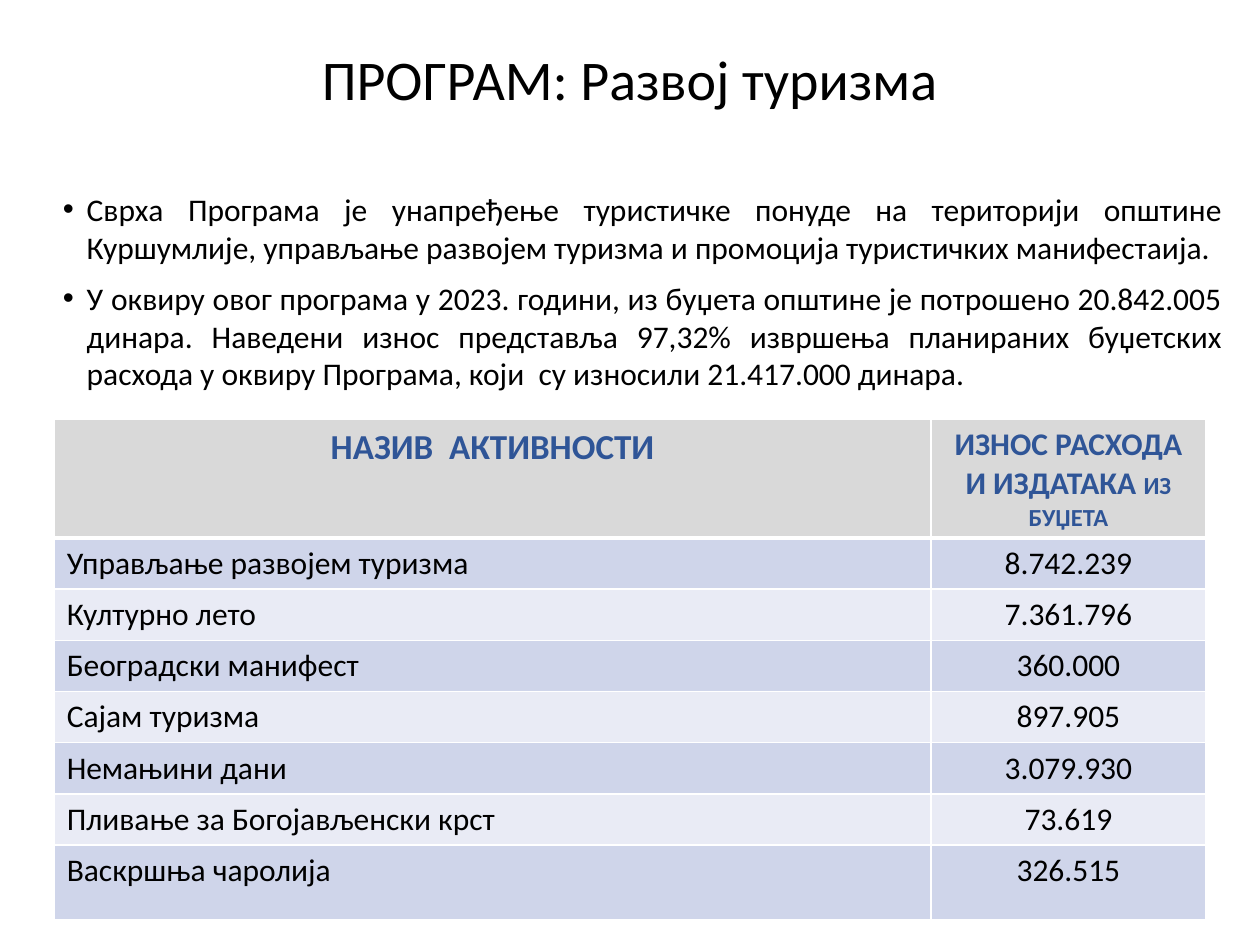
from lxml.etree import SubElement
from pptx import Presentation
from pptx.dml.color import RGBColor
from pptx.enum.text import MSO_ANCHOR, PP_ALIGN
from pptx.oxml.ns import qn
from pptx.util import Inches, Pt

BLACK = RGBColor(0x00, 0x00, 0x00)
WHITE = RGBColor(0xFF, 0xFF, 0xFF)
BLUE = RGBColor(0x2F, 0x55, 0x97)
GRAY = RGBColor(0xD9, 0xD9, 0xD9)
BANDS = (RGBColor(0xCF, 0xD5, 0xEA), RGBColor(0xE9, 0xEB, 0xF5))

TITLE = "ПРОГРАМ: Развој туризма"
BULLETS = [
    "Сврха Програма је унапређење туристичке понуде на територији општине "
    "Куршумлије, управљање развојем туризма и промоција туристичких манифестаија.",
    "У оквиру овог програма у 2023. години, из буџета општине је потрошено "
    "20.842.005 динара. Наведени износ представља 97,32% извршења планираних "
    "буџетских расхода у оквиру Програма, који  су износили 21.417.000 динара.",
]
ACTIVITIES = [
    ("Управљање развојем туризма", "8.742.239"),
    ("Културно лето", "7.361.796"),
    ("Београдски манифест", "360.000"),
    ("Сајам туризма", "897.905"),
    ("Немањини дани", "3.079.930"),
    ("Пливање за Богојављенски крст", "73.619"),
    ("Васкршња чаролија", "326.515"),
]


def add_text(p, text, size=18, color=BLACK, bold=False, align=PP_ALIGN.LEFT):
    p.alignment = align
    r = p.add_run()
    r.text = text
    r.font.name = "Calibri"
    r.font.size = Pt(size)
    r.font.bold = bold
    r.font.color.rgb = color


def add_frame(s, box, anchor=MSO_ANCHOR.TOP):
    tf = s.shapes.add_textbox(*map(Inches, box)).text_frame
    tf.word_wrap = True
    tf.vertical_anchor = anchor
    return tf


def add_title(s, box):
    p = add_frame(s, box, MSO_ANCHOR.BOTTOM).paragraphs[0]
    p.line_spacing = 0.9
    add_text(p, TITLE, size=32, align=PP_ALIGN.CENTER)


def add_bullets(s, box):
    tf = add_frame(s, box)
    for i, text in enumerate(BULLETS):
        p = tf.add_paragraph() if i else tf.paragraphs[0]
        p.space_after = Pt(7.5)
        add_text(p, text, align=PP_ALIGN.JUSTIFY)
        pPr = p._p.get_or_add_pPr()
        pPr.set("marL", str(Inches(0.19)))
        pPr.set("indent", str(Inches(-0.19)))
        SubElement(pPr, qn("a:buFont"), typeface="Arial")
        SubElement(pPr, qn("a:buChar"), char="•")


def style_cell(cell, fill, top=1, bottom=1):
    """Give the cell white borders, in points, and a solid fill."""
    tcPr = cell._tc.get_or_add_tcPr()
    for side, width in (("L", 1), ("R", 1), ("T", top), ("B", bottom)):
        ln = SubElement(tcPr, qn(f"a:ln{side}"), w=str(Pt(width)))
        SubElement(SubElement(ln, qn("a:solidFill")), qn("a:srgbClr"), val=str(WHITE))
    cell.fill.solid()
    cell.fill.fore_color.rgb = fill


def add_activities(s, box):
    left, top, width, height = map(Inches, box)
    table = s.shapes.add_table(len(ACTIVITIES) + 1, 2, left, top, width, height).table
    table.columns[0].width = Inches(6.96)
    table.columns[1].width = width - Inches(6.96)
    header, last, middle = Inches(0.94), Inches(0.59), len(ACTIVITIES) - 1
    for row in table.rows:
        row.height = (height - header - last) // middle
    table.rows[0].height = header
    table.rows[middle + 1].height = last

    headings = ([("НАЗИВ  АКТИВНОСТИ", 20)],
                [("ИЗНОС РАСХОДА И ИЗДАТАКА ", 18), ("ИЗ БУЏЕТА", 14)])
    for col, runs in enumerate(headings):
        cell = table.cell(0, col)
        style_cell(cell, GRAY, bottom=3)
        for text, size in runs:
            add_text(cell.text_frame.paragraphs[0], text, size=size, color=BLUE,
                     bold=True, align=PP_ALIGN.CENTER)

    for i, activity in enumerate(ACTIVITIES):
        for col, text in enumerate(activity):
            cell = table.cell(i + 1, col)
            style_cell(cell, BANDS[i % 2], top=1 if i else 3)
            add_text(cell.text_frame.paragraphs[0], text,
                     align=PP_ALIGN.CENTER if col else PP_ALIGN.LEFT)


def main():
    prs = Presentation()
    prs.slide_width, prs.slide_height = Inches(10), Inches(7.5)
    s = prs.slides.add_slide(prs.slide_layouts[6])
    add_title(s, (0.3, 0.25, 9.4, 0.69))
    add_bullets(s, (0.4, 1.46, 9.4, 1.8))
    add_activities(s, (0.43, 3.33, 9.14, 3.97))
    prs.save("out.pptx")


if __name__ == "__main__":
    main()
